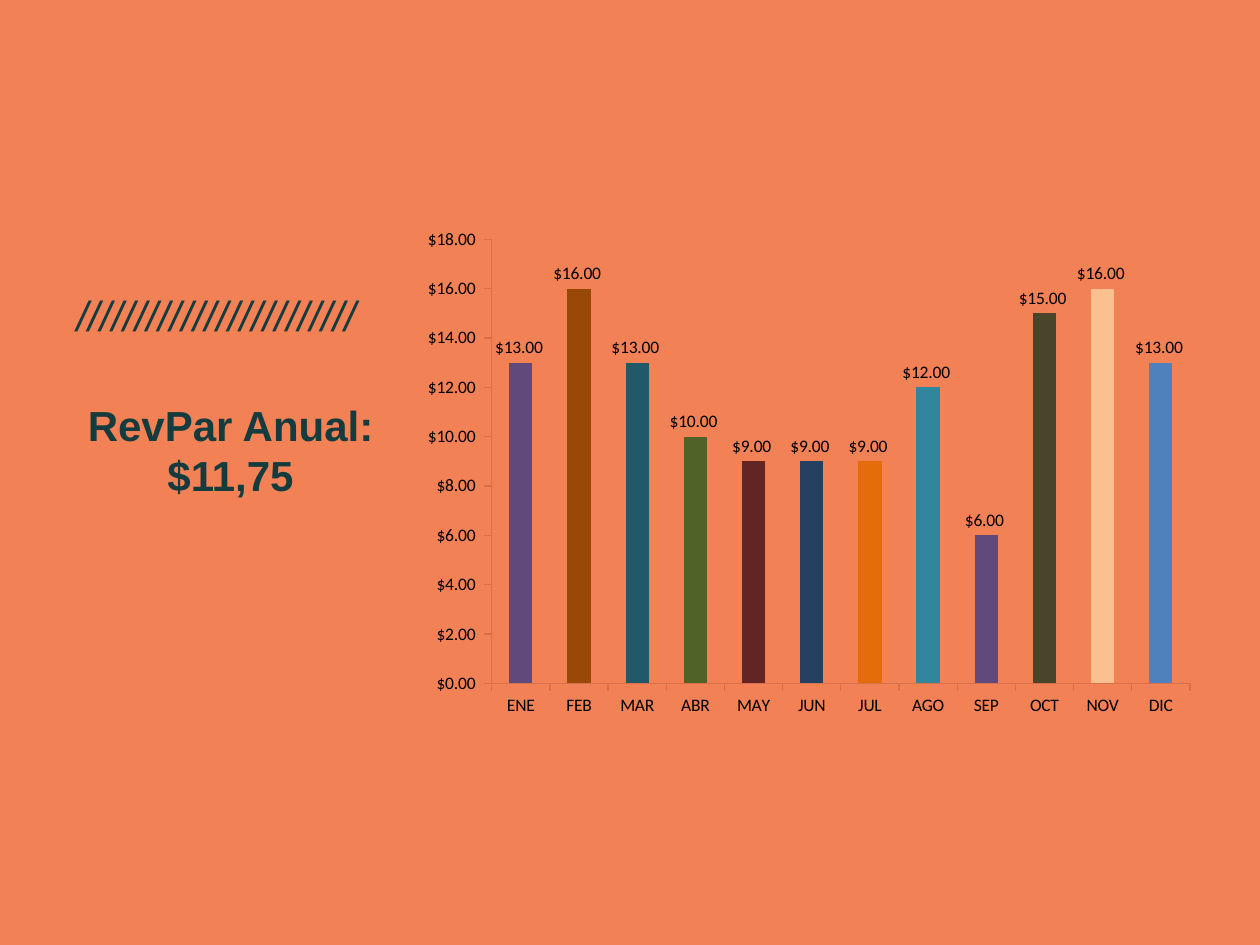
from dataclasses import dataclass

import pptx
import pptx.chart.data
import pptx.dml.color
import pptx.enum.chart
import pptx.enum.shapes
import pptx.enum.text
import pptx.util

Inches = pptx.util.Inches
Pt = pptx.util.Pt

COLORS = {
    "paper": "EEECE1", "orange": "F38156", "ink": "143C3E", "axis": "D9704A",
    "black": "000000", "purple": "604A7B", "brown": "984807", "teal": "215968",
    "green": "4F6228", "wine": "632523", "navy": "254061", "amber": "E46C0A",
    "aqua": "31859C", "olive": "4A452A", "peach": "FAC090", "blue": "4F81BD",
}
MONEY = '"$"#,##0.00_);\\("$"#,##0.00\\)'


@dataclass
class Month:
    name: str
    revpar: int
    color: str


@dataclass
class Label:
    text: str
    box: tuple
    align: object
    font: dict


MONTHS = [
    Month("ENE", 13, "purple"), Month("FEB", 16, "brown"),
    Month("MAR", 13, "teal"), Month("ABR", 10, "green"),
    Month("MAY", 9, "wine"), Month("JUN", 9, "navy"),
    Month("JUL", 9, "amber"), Month("AGO", 12, "aqua"),
    Month("SEP", 6, "purple"), Month("OCT", 15, "olive"),
    Month("NOV", 16, "peach"), Month("DIC", 13, "blue"),
]
ALIGN = pptx.enum.text.PP_ALIGN
INK_FONT = {"name": "Arial", "size": Pt(24)}
SLASHES = Label("/" * 24, (0.51, 2.25, 2.64, 0.85), ALIGN.LEFT,
                {**INK_FONT, "italic": True})
TITLE = Label("RevPar Anual: $11,75", (0.13, 3.12, 3.4, 0.91), ALIGN.CENTER,
              {**INK_FONT, "bold": True})


def rgb(name: str) -> pptx.dml.color.RGBColor:
    return pptx.dml.color.RGBColor.from_string(COLORS[name])


def apply(obj, values: dict) -> None:
    for key, value in values.items():
        setattr(obj, key, value)


def paint(fill, color: str) -> None:
    fill.solid()
    fill.fore_color.rgb = rgb(color)


def write_label(sp, label: Label) -> None:
    places = map(Inches, label.box)
    apply(sp, dict(zip(("left", "top", "width", "height"), places)))
    tf = sp.text_frame
    apply(tf, {"word_wrap": True,
               "auto_size": pptx.enum.text.MSO_AUTO_SIZE.NONE,
               "vertical_anchor": pptx.enum.text.MSO_ANCHOR.TOP})
    p = tf.paragraphs[0]
    p.alignment = label.align
    r = p.add_run()
    r.text = label.text
    apply(r.font, label.font)
    r.font.color.rgb = rgb("ink")


def add_background(s, width: int, height: int) -> None:
    paint(s.background.fill, "paper")
    sp = s.shapes.add_shape(pptx.enum.shapes.MSO_SHAPE.RECTANGLE, 0, 0, width, height)
    sp.shadow.inherit = False
    paint(sp.fill, "orange")
    sp.line.fill.background()


def add_revpar_chart(s, months: list) -> None:
    data = pptx.chart.data.CategoryChartData(number_format=MONEY)
    data.categories = [m.name for m in months]
    data.add_series("Series 1", [m.revpar for m in months])
    chart = s.shapes.add_chart(
        pptx.enum.chart.XL_CHART_TYPE.COLUMN_CLUSTERED,
        Inches(3.27), Inches(1.74), Inches(6.3), Inches(4.02), data).chart
    apply(chart, {"has_legend": False, "has_title": False})
    apply(chart.font, {"name": "Calibri", "size": Pt(10)})
    chart.font.color.rgb = rgb("black")

    for axis in (chart.category_axis, chart.value_axis):
        apply(axis, {"has_major_gridlines": False,
                     "major_tick_mark": pptx.enum.chart.XL_TICK_MARK.OUTSIDE})
        axis.format.line.color.rgb = rgb("axis")
        axis.format.line.width = Pt(0.75)
    apply(chart.value_axis, {"minimum_scale": 0, "maximum_scale": 18, "major_unit": 2})
    number_format = {"number_format": MONEY, "number_format_is_linked": False}
    apply(chart.value_axis.tick_labels, number_format)

    plot = chart.plots[0]
    apply(plot, {"gap_width": 150, "vary_by_categories": False, "has_data_labels": True})
    apply(plot.data_labels, {
        **number_format, "show_value": True,
        "position": pptx.enum.chart.XL_LABEL_POSITION.OUTSIDE_END})
    series = plot.series[0]
    paint(series.format.fill, "blue")
    for i, month in enumerate(months):
        paint(series.points[i].format.fill, month.color)


def main() -> None:
    prs = pptx.Presentation()
    apply(prs, {"slide_width": Inches(10), "slide_height": Inches(7.5)})
    s = prs.slides.add_slide(prs.slide_layouts[5])
    add_background(s, prs.slide_width, prs.slide_height)
    add_revpar_chart(s, MONTHS)
    write_label(s.shapes.add_textbox(0, 0, 0, 0), SLASHES)
    title = s.shapes.title
    write_label(title, TITLE)
    s.shapes.element.append(title.element)
    prs.save("out.pptx")


if __name__ == "__main__":
    main()
